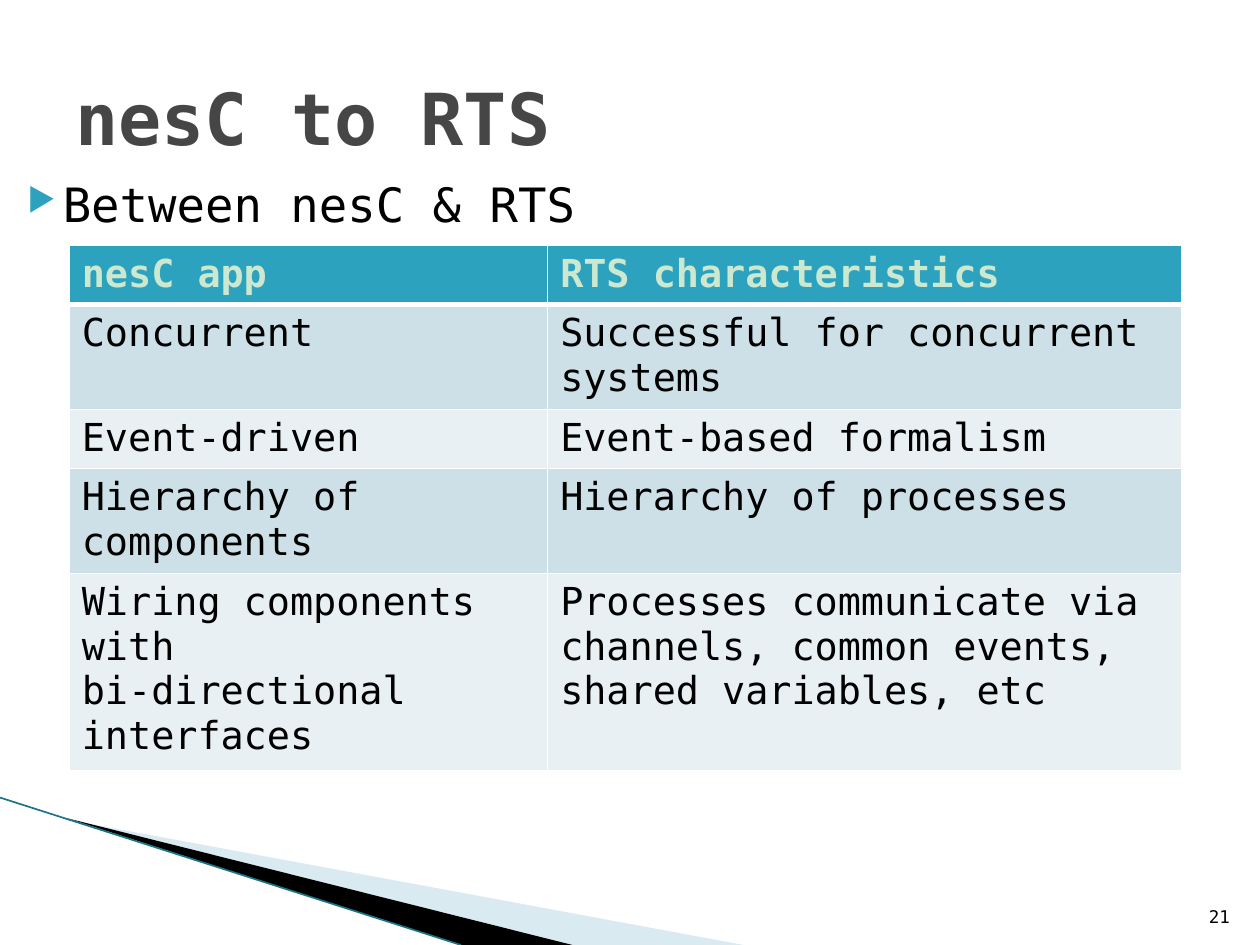
from dataclasses import dataclass

from lxml.etree import SubElement
from pptx import Presentation
from pptx.dml.color import RGBColor
from pptx.enum.text import MSO_ANCHOR, PP_ALIGN
from pptx.oxml.ns import qn
from pptx.util import Inches, Pt

SLIDE_WIDTH, SLIDE_HEIGHT = Inches(10), Inches(7.5)
GRID_COLUMNS, GRID_ROWS = 100, 75


@dataclass(frozen=True)
class Theme:
    """Hold the colours and type sizes of the slide."""

    font: str = "DejaVu Sans Mono"
    background: str = "FFFFFF"
    text: str = "000000"
    title: str = "464646"
    accent: str = "2DA2BF"
    header_text: str = "CCE8CF"
    bands: tuple = ("CDE0E8", "E8F0F4")
    light_wedge: str = "A0CBDC"
    dark_wedge: str = "000000"
    edge: str = "1B7488"
    title_size: int = 41
    body_size: int = 27
    table_size: int = 22
    number_size: int = 10


@dataclass(frozen=True)
class Box:
    """Hold a region in grid columns and rows."""

    left: float
    top: float
    width: float
    height: float

    def lengths(self):
        """Return left, top, width and height as slide lengths."""
        return *place(self.left, self.top), *place(self.width, self.height)

    def point(self, across, down):
        """Return the slide point at the given shares of the box."""
        return place(self.left + across * self.width, self.top + down * self.height)


THEME = Theme()
TABLE_ROWS = [
    ("nesC app", "RTS characteristics"),
    ("Concurrent", "Successful for concurrent systems"),
    ("Event-driven", "Event-based formalism"),
    ("Hierarchy of components", "Hierarchy of processes"),
    (
        "Wiring components with\nbi-directional interfaces",
        "Processes communicate via channels, common events, shared variables, etc",
    ),
]
ROW_LINES = (1, 2, 1, 2, 4)
COLUMN_SHARES = (0.43, 0.57)


def place(column, row):
    """Turn a grid position into slide lengths."""
    return round(column * SLIDE_WIDTH / GRID_COLUMNS), round(row * SLIDE_HEIGHT / GRID_ROWS)


def write_text(frame, text, *, size, color=THEME.text, bold=False, align=PP_ALIGN.LEFT):
    """Write each line of the text as a formatted paragraph."""
    frame.word_wrap = True
    for index, line in enumerate(text.split("\n")):
        paragraph = frame.add_paragraph() if index else frame.paragraphs[0]
        paragraph.alignment = align
        run = paragraph.add_run()
        run.text = line
        run.font.name = THEME.font
        run.font.size = Pt(size)
        run.font.bold = bold
        run.font.color.rgb = RGBColor.from_string(color)


def add_text(slide, box, text, anchor=MSO_ANCHOR.TOP, **text_format):
    """Add a text box that fills the given region."""
    frame = slide.shapes.add_textbox(*box.lengths()).text_frame
    frame.vertical_anchor = anchor
    write_text(frame, text, **text_format)
    return frame


def add_bullet_line(slide, box, text):
    """Add a line of body text with a triangular bullet."""
    frame = add_text(slide, box, text, size=THEME.body_size)
    properties = frame.paragraphs[0]._p.get_or_add_pPr()
    properties.set("marL", str(Inches(0.4)))
    properties.set("indent", str(Inches(-0.28)))
    color = SubElement(properties, qn("a:buClr"))
    SubElement(color, qn("a:srgbClr"), val=THEME.accent)
    SubElement(properties, qn("a:buSzPct"), val="68000")
    SubElement(properties, qn("a:buChar"), char="▶")


def add_wedge(slide, box, corners, color, opacity=100):
    """Add a filled outline whose corners are shares of the box."""
    first, *others = [box.point(*corner) for corner in corners]
    builder = slide.shapes.build_freeform(*first, scale=1.0)
    builder.add_line_segments(others, close=True)
    shape = builder.convert_to_shape()
    shape.shadow.inherit = False
    shape.fill.solid()
    shape.fill.fore_color.rgb = RGBColor.from_string(color)
    shape.line.fill.background()
    if opacity < 100:
        fill_color = shape._element.spPr.find(qn("a:solidFill")).find(qn("a:srgbClr"))
        SubElement(fill_color, qn("a:alpha"), val=str(opacity * 1000))


def add_corner_wedges(slide, box):
    """Add the wedges and the edge line in the lower left corner."""
    add_wedge(slide, box, [(0.09, 0.15), (1, 1), (0.77, 1)], THEME.light_wedge, 40)
    add_wedge(slide, box, [(0.09, 0.14), (0.77, 1), (0.62, 1)], THEME.dark_wedge)
    edge = slide.shapes.add_connector(1, *box.point(0, 0), *box.point(0.62, 1))
    edge.line.color.rgb = RGBColor.from_string(THEME.edge)
    edge.line.width = Pt(0.95)
    SubElement(edge._element.spPr, qn("a:effectLst"))


def style_cell(cell, fill, border_widths):
    """Set the borders and then the fill of a table cell."""
    properties = cell._tc.get_or_add_tcPr()
    for side, width in border_widths.items():
        border = SubElement(properties, qn(f"a:ln{side}"), w=str(Pt(width)))
        paint = SubElement(border, qn("a:solidFill"))
        SubElement(paint, qn("a:srgbClr"), val=THEME.background)
    cell.fill.solid()
    cell.fill.fore_color.rgb = RGBColor.from_string(fill)


def add_comparison_table(slide, box):
    """Add the table that pairs app traits with RTS traits."""
    frame = slide.shapes.add_table(len(TABLE_ROWS), len(COLUMN_SHARES), *box.lengths())
    table = frame.table
    table.horz_banding = False
    for column, share in zip(table.columns, COLUMN_SHARES):
        column.width = place(box.width * share, 0)[0]
    for index, (texts, lines) in enumerate(zip(TABLE_ROWS, ROW_LINES)):
        header = index == 0
        table.rows[index].height = Inches(0.1 + 0.35 * lines)
        fill = THEME.accent if header else THEME.bands[(index - 1) % 2]
        borders = {"L": 1, "R": 1, "T": 3 if index == 1 else 1, "B": 3 if header else 1}
        for column, text in enumerate(texts):
            cell = table.cell(index, column)
            color = THEME.header_text if header else THEME.text
            write_text(cell.text_frame, text, size=THEME.table_size, color=color, bold=header)
            style_cell(cell, fill, borders)


def build_slide(presentation):
    """Build the comparison slide."""
    slide = presentation.slides.add_slide(presentation.slide_layouts[6])
    slide.background.fill.solid()
    slide.background.fill.fore_color.rgb = RGBColor.from_string(THEME.background)
    add_corner_wedges(slide, Box(0, 63.3, 59, 11.7))
    add_bullet_line(slide, Box(0, 13.4, 99.4, 5.5), "Between nesC & RTS")
    add_text(slide, Box(5, 3, 90, 12.5), "nesC to RTS", MSO_ANCHOR.MIDDLE,
             size=THEME.title_size, color=THEME.title, bold=True)
    add_text(slide, Box(94.6, 70.1, 4, 4), "21", MSO_ANCHOR.BOTTOM,
             size=THEME.number_size, align=PP_ALIGN.RIGHT)
    add_comparison_table(slide, Box(5.5, 19.5, 88.3, 40))


def main():
    """Create and save the presentation."""
    presentation = Presentation()
    presentation.slide_width = SLIDE_WIDTH
    presentation.slide_height = SLIDE_HEIGHT
    build_slide(presentation)
    presentation.save("out.pptx")


if __name__ == "__main__":
    main()
